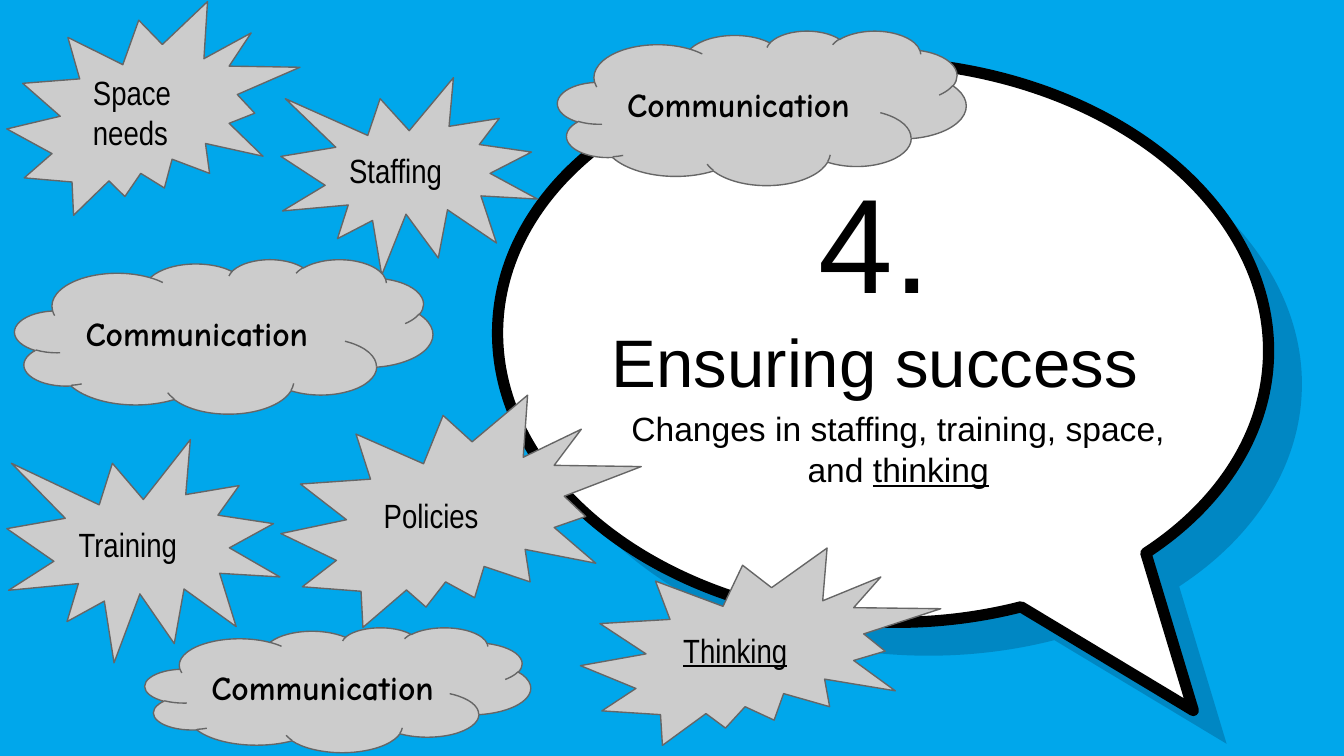
import pptx
import pptx.dml.color
import pptx.enum.shapes
import pptx.enum.text
import pptx.oxml.ns
import pptx.util
import lxml.etree

Cm = pptx.util.Cm
Pt = pptx.util.Pt
Preset = pptx.enum.shapes.MSO_SHAPE
Align = pptx.enum.text.PP_ALIGN
Anchor = pptx.enum.text.MSO_ANCHOR

COLORS = {
    "sky": "00A7EB",
    "shade": "001936",
    "bubble": "FFFFFF",
    "ink": "000000",
    "grey": "CCCCCC",
    "edge": "666666",
}

BUBBLE = (9.4, 1.17, 14.58, 10.59)
SHADE_OFFSET = 0.63
SHADE_ALPHA = 22

HEADLINES = [
    ((10.54, 4.6, 11.99, 3.23), Anchor.BOTTOM,
     [(72, [("4.", False)]), (36, [("Ensuring success", False)])]),
    ((11.4, 7.47, 11.15, 2.18), Anchor.TOP,
     [(18, [("Changes in staffing, training, space, and ", False), ("thinking", True)])]),
]

STYLES = {
    "spiky": (Preset.EXPLOSION2, "Arial Narrow", False),
    "burst": (Preset.EXPLOSION1, "Arial Narrow", False),
    "cloud": (Preset.CLOUD, "Comic Neue", True),
}

TOPICS = [
    ("spiky", "Space needs", False, (0.13, 0.03, 5.54, 4.04)),
    ("burst", "Staffing", False, (5.31, 1.47, 4.85, 3.73)),
    ("burst", "Training", False, (0.13, 8.31, 5.16, 4.22)),
    ("cloud", "Communication", False, (0.28, 4.9, 7.9, 2.92)),
    ("cloud", "Communication", False, (10.54, 0.58, 7.72, 2.92)),
    ("spiky", "Policies", False, (5.31, 7.47, 6.81, 4.39)),
    ("cloud", "Communication", False, (2.74, 11.86, 7.29, 2.36)),
    ("spiky", "Thinking", True, (10.97, 10.36, 6.81, 3.73)),
]


def color(name):
    return pptx.dml.color.RGBColor.from_string(COLORS[name])


def add_shape(page, preset, place, fill, line=None, width=0):
    shape = page.shapes.add_shape(preset, *map(Cm, place))
    shape.shadow.inherit = False
    shape.fill.solid()
    shape.fill.fore_color.rgb = color(fill)
    if line:
        shape.line.color.rgb = color(line)
        shape.line.width = Pt(width)
    else:
        shape.line.fill.background()
    return shape


def add_bubble(page, offset, fill, line=None, width=0):
    left, top, wide, high = BUBBLE
    bubble = add_shape(page, Preset.OVAL_CALLOUT,
                       (left + offset, top + offset, wide, high), fill, line, width)
    bubble.adjustments[0] = -0.425
    bubble.adjustments[1] = 0.63
    bubble.rotation = 2.8
    bubble.element.spPr.xfrm.set("flipH", "1")
    return bubble


def prepare_frame(shape, anchor):
    frame = shape.text_frame
    frame.word_wrap = True
    frame.vertical_anchor = anchor
    frame.margin_left = frame.margin_right = Cm(0.25)
    frame.margin_top = frame.margin_bottom = Cm(0.25)
    return frame


def fill_paragraph(para, spans, font, size, align, bold=False):
    para.alignment = align
    para.font.name = font
    para.font.size = Pt(size)
    para.font.bold = bold
    para.font.color.rgb = color("ink")
    for words, underlined in spans:
        span = para.add_run()
        span.text = words
        if underlined:
            span.font.underline = True


def main():
    deck = pptx.Presentation()
    deck.slide_width = Cm(25.4)
    deck.slide_height = Cm(14.29)
    page = deck.slides.add_slide(deck.slide_layouts[6])
    page.background.fill.solid()
    page.background.fill.fore_color.rgb = color("sky")

    shade = add_bubble(page, SHADE_OFFSET, "shade")
    tint = shade.element.spPr.find(".//" + pptx.oxml.ns.qn("a:srgbClr"))
    lxml.etree.SubElement(tint, pptx.oxml.ns.qn("a:alpha"), val=str(SHADE_ALPHA * 1000))
    add_bubble(page, 0, "bubble", "ink", 6)

    for place, anchor, lines in HEADLINES:
        box = page.shapes.add_textbox(*map(Cm, place))
        frame = prepare_frame(box, anchor)
        for index, (size, spans) in enumerate(lines):
            para = frame.add_paragraph() if index else frame.paragraphs[0]
            fill_paragraph(para, spans, "Arial", size, Align.CENTER)

    for style, words, underlined, place in TOPICS:
        preset, font, bold = STYLES[style]
        topic = add_shape(page, preset, place, "grey", "edge", 0.75)
        frame = prepare_frame(topic, Anchor.MIDDLE)
        fill_paragraph(frame.paragraphs[0], [(words, underlined)], font, 18, Align.LEFT, bold)

    deck.save("out.pptx")


if __name__ == "__main__":
    main()
